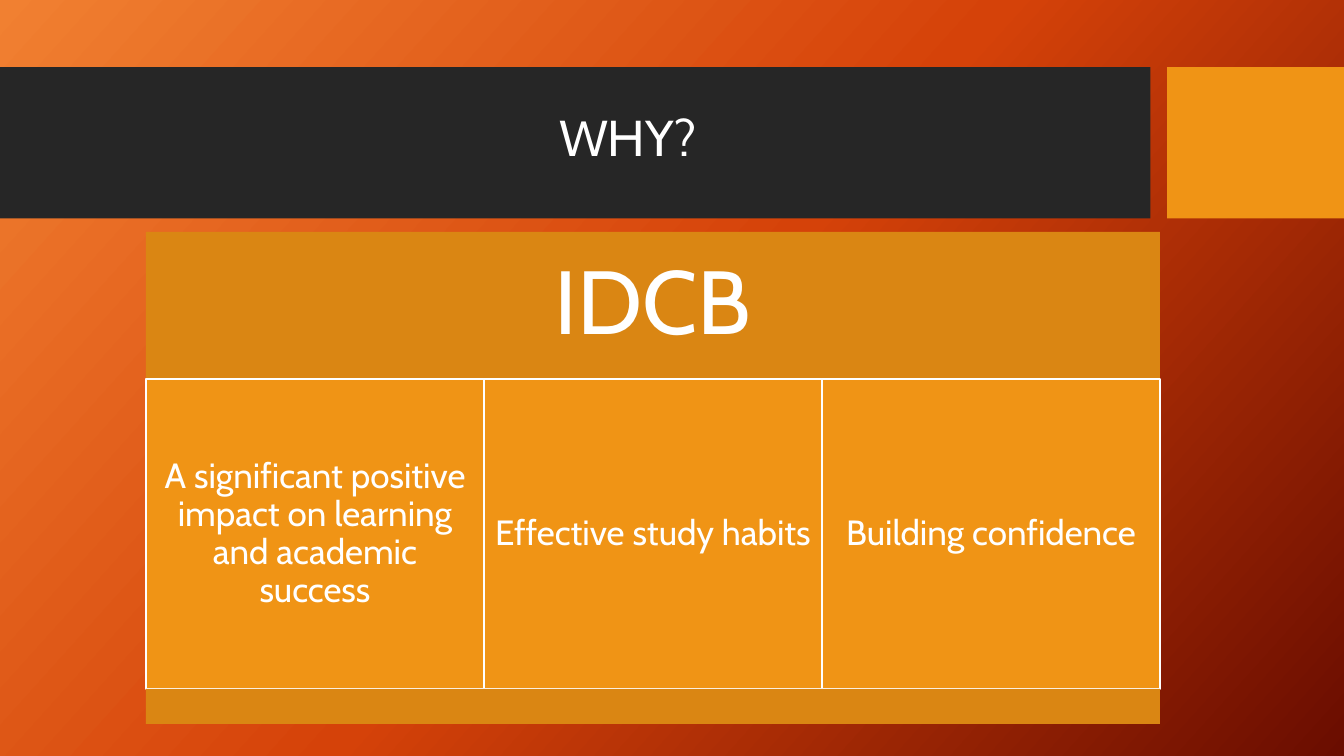
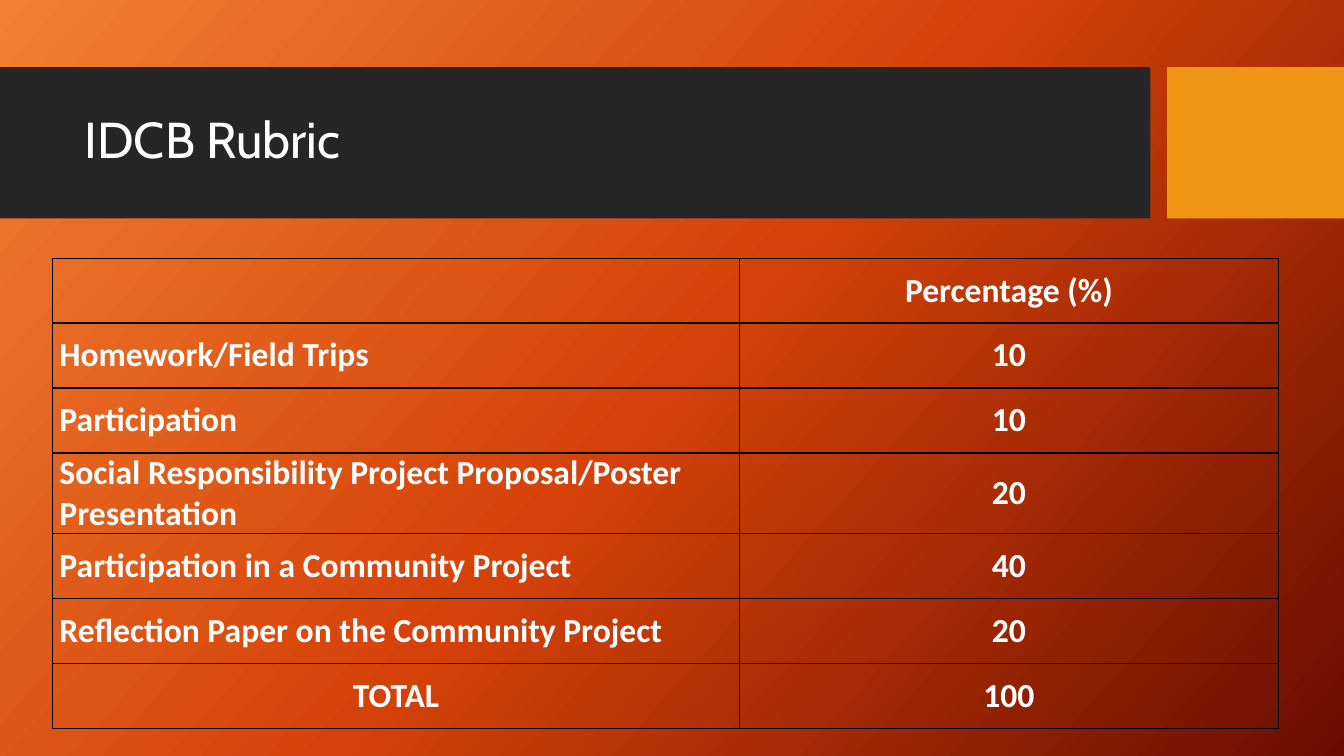
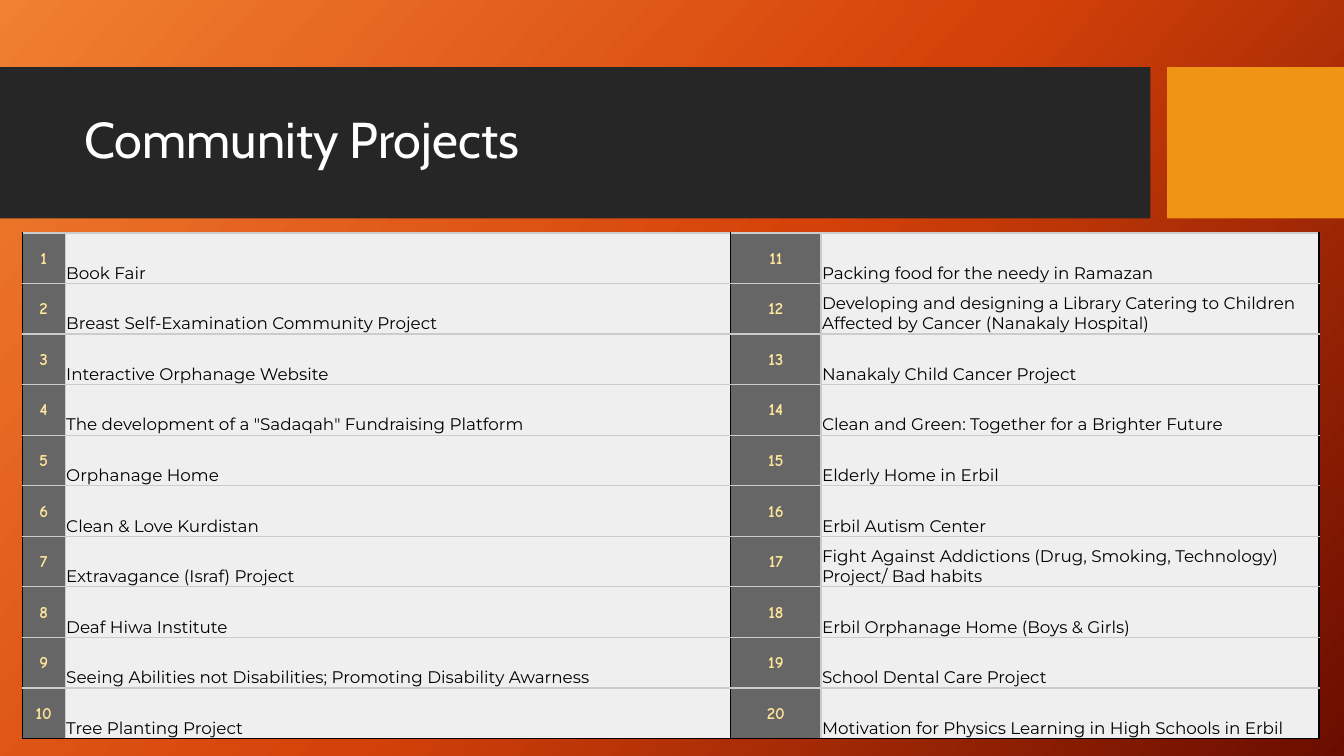
from copy import deepcopy
from dataclasses import dataclass
from itertools import accumulate

from lxml import etree
from pptx import Presentation
from pptx.dml.color import RGBColor
from pptx.enum import shapes, text
from pptx.oxml import ns
from pptx.slide import Slide, SlideMaster
from pptx.table import Table, _Cell
from pptx.text.text import TextFrame
from pptx.util import Pt

COLOURS = {
    "glow": "F18031",
    "flame": "D54209",
    "ember": "6A0D00",
    "band": "262626",
    "amber": "F09415",
    "ochre": "DA8613",
    "white": "FFFFFF",
    "black": "000000",
    "rule": "CCCCCC",
    "number_fill": "666666",
    "number_text": "FFE599",
    "project_fill": "EFEFEF",
}
BLANK = 6
LEFT, CENTRE = text.PP_ALIGN.LEFT, text.PP_ALIGN.CENTER
MIDDLE, BOTTOM = text.MSO_ANCHOR.MIDDLE, text.MSO_ANCHOR.BOTTOM


@dataclass(frozen=True)
class Area:
    left: float
    top: float
    width: float
    height: float

    def lengths(self) -> list[int]:
        return [Pt(value) for value in (self.left, self.top, self.width, self.height)]


@dataclass(frozen=True)
class TextStyle:
    font: str
    size: float
    colour: str = "white"
    bold: bool = False
    align: text.PP_ALIGN = LEFT
    anchor: text.MSO_ANCHOR = MIDDLE
    spacing: float = 1.0
    margins: tuple[float, float, float, float] = (7.2, 3.6, 7.2, 3.6)


@dataclass(frozen=True)
class Panel:
    area: Area
    fill: str
    line: str | None = None
    words: str = ""
    style: TextStyle | None = None


@dataclass(frozen=True)
class CellStyle:
    words: TextStyle
    borders: dict[str, str]
    fill: str | None = None


BANDS = (
    Panel(Area(0, 48, 821.8, 108), "band"),
    Panel(Area(833.6, 48, 126.4, 108), "amber"),
)
TITLE_AREA = Area(53.3, 59, 756.7, 85)
TITLE = TextStyle("Cabin", 36, spacing=0.9)
CENTRED_TITLE = TextStyle("Cabin", 36, align=CENTRE, spacing=0.9)
HEADING = TextStyle("Cabin", 64, align=CENTRE, spacing=0.9, margins=(19.4,) * 4)
REASON = TextStyle("Cabin", 25, align=CENTRE, spacing=0.9, margins=(7.2,) * 4)

RUBRIC_MARGINS = (5.1, 0, 5.1, 0)
RUBRIC_LABEL = TextStyle("Calibri", 24, bold=True, margins=RUBRIC_MARGINS)
RUBRIC_VALUE = TextStyle("Calibri", 24, bold=True, align=CENTRE, margins=RUBRIC_MARGINS)
PROJECT_MARGINS = (0.75, 0.75, 0.75, 0)
NUMBER = TextStyle("Comic Neue", 12, "number_text", True, CENTRE, margins=PROJECT_MARGINS)
PROJECT = TextStyle("Montserrat", 12, "black", anchor=BOTTOM, margins=PROJECT_MARGINS)

REASONS = (
    "A significant positive impact on learning and academic success",
    "Effective study habits",
    "Building confidence",
)
RUBRIC = (
    ("", "Percentage (%)"),
    ("Homework/Field Trips", "10"),
    ("Participation", "10"),
    ("Social Responsibility Project Proposal/Poster Presentation", "20"),
    ("Participation in a Community Project", "40"),
    ("Reflection Paper on the Community Project", "20"),
    ("TOTAL", "100"),
)
PROJECTS = (
    "Book Fair",
    "Breast Self-Examination Community Project",
    "Interactive Orphanage Website",
    'The development of a "Sadaqah" Fundraising Platform',
    "Orphanage Home",
    "Clean & Love Kurdistan",
    "Extravagance (Israf) Project",
    "Deaf Hiwa Institute",
    "Seeing Abilities not Disabilities; Promoting Disability Awarness",
    "Tree Planting Project",
    "Packing food for the needy in Ramazan",
    "Developing and designing a Library Catering to Children Affected by Cancer (Nanakaly Hospital)",
    "Nanakaly Child Cancer Project",
    "Clean and Green: Together for a Brighter Future",
    "Elderly Home in Erbil",
    "Erbil Autism Center",
    "Fight Against Addictions (Drug, Smoking, Technology) Project/ Bad habits",
    "Erbil Orphanage Home (Boys & Girls)",
    "School Dental Care Project",
    "Motivation for Physics Learning in High Schools in Erbil",
)


def rgb(name: str) -> RGBColor:
    return RGBColor.from_string(COLOURS[name])


def set_all(target: object, values: dict[str, object]) -> None:
    for name, value in values.items():
        setattr(target, name, value)


def margin_values(style: TextStyle) -> dict[str, object]:
    sides = ("left", "top", "right", "bottom")
    return {f"margin_{side}": Pt(value) for side, value in zip(sides, style.margins)}


def write(frame: TextFrame, words: str, style: TextStyle) -> None:
    para = frame.paragraphs[0]
    set_all(para, {"alignment": style.align, "line_spacing": style.spacing})
    span = para.add_run()
    span.text = words
    set_all(span.font, {"name": style.font, "size": Pt(style.size), "bold": style.bold})
    span.font.color.rgb = rgb(style.colour)


def write_framed(frame: TextFrame, words: str, style: TextStyle) -> None:
    set_all(frame, {"word_wrap": True, "vertical_anchor": style.anchor, **margin_values(style)})
    write(frame, words, style)


def paint_background(master: SlideMaster) -> None:
    fill = master.background.fill
    fill.gradient()
    fill.gradient_angle = 360 - 42
    first = master.element.xpath("./p:cSld/p:bg//a:gs")[0]
    first.addnext(deepcopy(first))
    for stop, name, position in zip(fill.gradient_stops, ("glow", "flame", "ember"), (0, 0.5, 1)):
        stop.color.rgb = rgb(name)
        stop.position = position


def draw_panel(page: Slide, panel: Panel) -> None:
    box = page.shapes.add_shape(shapes.MSO_SHAPE.RECTANGLE, *panel.area.lengths())
    box.shadow.inherit = False
    box.fill.solid()
    box.fill.fore_color.rgb = rgb(panel.fill)
    if panel.line:
        box.line.color.rgb = rgb(panel.line)
        box.line.width = Pt(1)
    else:
        box.line.fill.background()
    if panel.style:
        write_framed(box.text_frame, panel.words, panel.style)


def add_page(deck: Presentation, title: str, style: TextStyle = TITLE, area: Area = TITLE_AREA) -> Slide:
    page = deck.slides.add_slide(deck.slide_layouts[BLANK])
    for band in BANDS:
        draw_panel(page, band)
    box = page.shapes.add_textbox(*area.lengths())
    write_framed(box.text_frame, title, style)
    return page


def add_grid(page: Slide, left: float, top: float, widths: tuple[float, ...], row_height: float, rows: int) -> Table:
    area = Area(left, top, sum(widths), row_height * rows)
    table = page.shapes.add_table(rows, len(widths), *area.lengths()).table
    set_all(table, {"first_row": False, "horz_banding": False})
    for column, width in zip(table.columns, widths):
        column.width = Pt(width)
    for row in table.rows:
        row.height = Pt(row_height)
    return table


def fill_cell(cell: _Cell, words: str, style: CellStyle) -> None:
    set_all(cell, {"vertical_anchor": style.words.anchor, **margin_values(style.words)})
    properties = cell._tc.get_or_add_tcPr()
    for side in "LRTB":
        line = etree.SubElement(properties, ns.qn(f"a:ln{side}"), w=str(Pt(1)))
        solid = etree.SubElement(line, ns.qn("a:solidFill"))
        etree.SubElement(solid, ns.qn("a:srgbClr"), val=COLOURS[style.borders[side]])
    if style.fill:
        cell.fill.solid()
        cell.fill.fore_color.rgb = rgb(style.fill)
    else:
        cell.fill.background()
    if words:
        write(cell.text_frame, words, style.words)


def build_why(deck: Presentation) -> None:
    page = add_page(deck, "WHY?", CENTRED_TITLE, Area(74.2, 58.3, 748.8, 84.2))
    left, width = 104.3, 724.2
    heights = (105.1, 221.4, 25)
    heading_top, reason_top, footer_top = accumulate(heights[:2], initial=165.6)
    draw_panel(page, Panel(Area(left, heading_top, width, heights[0]), "ochre", None, "IDCB", HEADING))
    step = width / len(REASONS)
    for index, reason in enumerate(REASONS):
        area = Area(left + index * step, reason_top, step, heights[1])
        draw_panel(page, Panel(area, "amber", "white", reason, REASON))
    draw_panel(page, Panel(Area(left, footer_top, width, heights[2]), "ochre"))


def build_rubric(deck: Presentation) -> None:
    page = add_page(deck, "IDCB Rubric")
    table = add_grid(page, 37.4, 184.4, (491, 384.6), 46.4, len(RUBRIC))
    borders = dict.fromkeys("LRTB", "black")
    for row, entries in enumerate(RUBRIC):
        for column, words in enumerate(entries):
            centred = column == 1 or words == "TOTAL"
            style = RUBRIC_VALUE if centred else RUBRIC_LABEL
            fill_cell(table.cell(row, column), words, CellStyle(style, borders))


def build_projects(deck: Presentation) -> None:
    page = add_page(deck, "Community Projects")
    rows = len(PROJECTS) // 2
    table = add_grid(page, 15.8, 166.4, (30.8, 475.4, 64.5, 355.7), 36.14, rows)
    for index, project in enumerate(PROJECTS):
        half, row = divmod(index, rows)
        borders = dict.fromkeys("LRTB", "rule")
        if row == rows - 1:
            borders["B"] = "black"
        number_style = CellStyle(NUMBER, {**borders, "L": "black"}, "number_fill")
        project_style = CellStyle(PROJECT, {**borders, "R": "black"}, "project_fill")
        fill_cell(table.cell(row, 2 * half), str(index + 1), number_style)
        fill_cell(table.cell(row, 2 * half + 1), project, project_style)


def main() -> None:
    deck = Presentation()
    set_all(deck, {"slide_width": Pt(960), "slide_height": Pt(540)})
    paint_background(deck.slide_master)
    for build in (build_why, build_rubric, build_projects):
        build(deck)
    deck.save("out.pptx")


if __name__ == "__main__":
    main()
